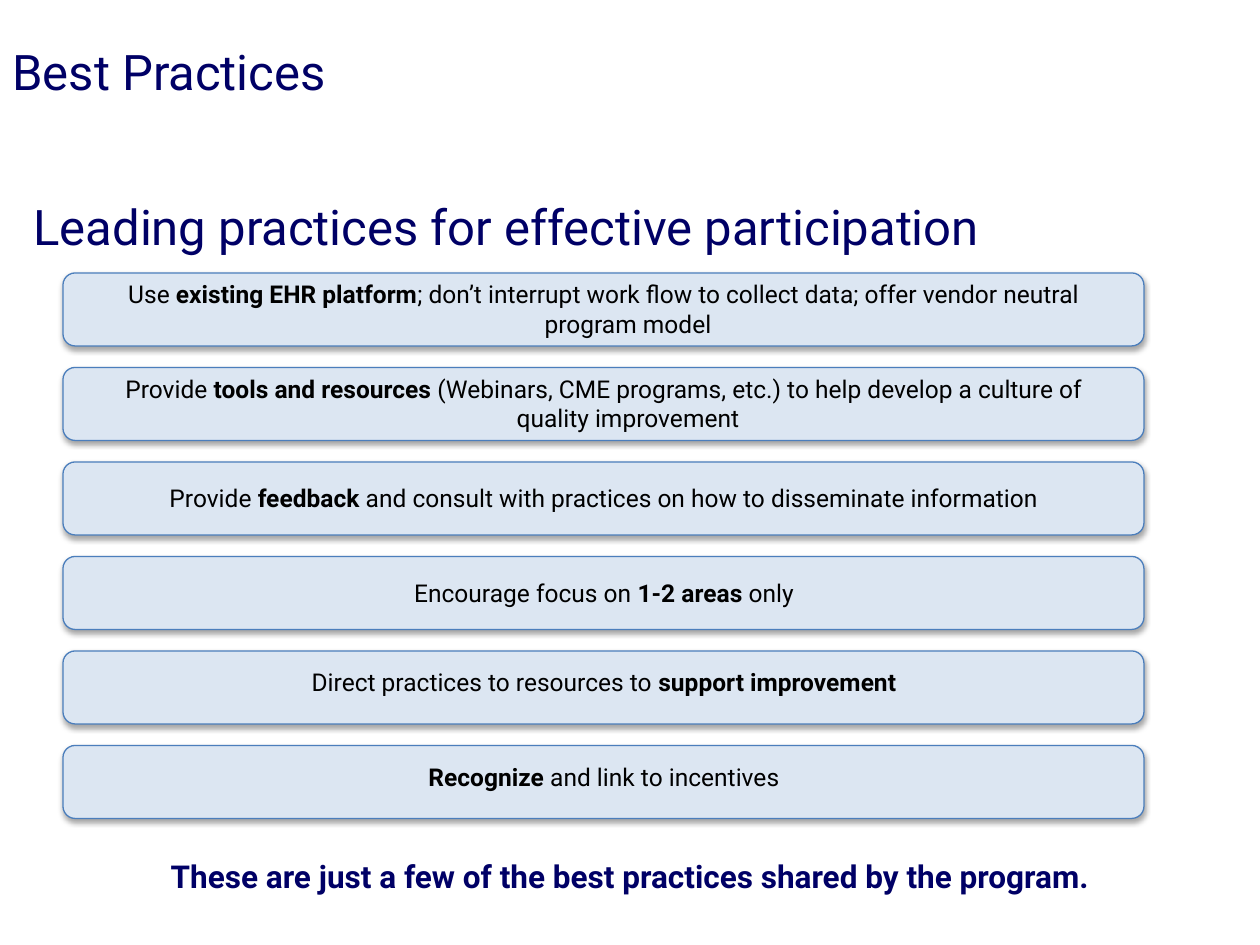
from lxml.etree import SubElement
from pptx import Presentation
from pptx.dml.color import RGBColor
from pptx.enum.shapes import MSO_SHAPE
from pptx.enum.text import MSO_ANCHOR, MSO_AUTO_SIZE, PP_ALIGN
from pptx.oxml.ns import qn
from pptx.util import Emu, Pt

SCALE = 914400 / 126  # EMU per px
HUES = {"navy": "000066", "black": "000000", "pale": "DCE6F2", "edge": "4B7EBC"}

# Text formats
HEAD = {"name": "Roboto", "size": Pt(28), "bold": False}
ITEM = {"name": "Roboto", "size": Pt(14), "bold": False}
NOTE = {"name": "Roboto", "size": Pt(18), "bold": True}
HANG = 48  # hanging indent of the practice text

# Bars: a column of equal pitch; each text is offset from its bar's top
LEFT, TOP, WIDE, HIGH = 63, 273, 1081, 73
PITCH = 94.5
# Words between asterisks are bold
ITEMS = [
    ("Use *existing EHR platform*; don’t interrupt work flow to collect data; "
     "offer vendor neutral program model", 0, 72),
    ("Provide *tools and resources* (Webinars, CME programs, etc.) to help "
     "develop a culture of quality improvement", 0, 72),
    ("Provide *feedback* and consult with practices on how to disseminate "
     "information", 15, 43),
    ("Encourage focus on *1-2 areas* only", 15, 43),
    ("Direct practices to resources to *support improvement*", 10, 43),
    ("*Recognize* and link to incentives", 10, 43),
]


def px(*sizes):
    return [Emu(round(size * SCALE)) for size in sizes]


def hue(key):
    return RGBColor.from_string(HUES[key])


def apply(thing, values):
    for key, value in values.items():
        setattr(thing, key, value)


def place(shape, *box):
    apply(shape, dict(zip(("left", "top", "width", "height"), px(*box))))


def write(shape, text, look, color, align, anchor=MSO_ANCHOR.TOP):
    """Fill a shape with one paragraph and return the paragraph."""
    frame = shape.text_frame
    apply(frame, {"word_wrap": True, "auto_size": MSO_AUTO_SIZE.NONE,
                  "vertical_anchor": anchor})
    para = frame.paragraphs[0]
    para.alignment = align
    for index, part in enumerate(text.split("*")):
        if part:
            run = para.add_run()
            run.text = part
            apply(run.font, look)
            if index % 2:
                run.font.bold = True
            run.font.color.rgb = hue(color)
    return para


def shade(shape):
    """Give a shape a soft shadow straight below."""
    shape.shadow.inherit = False
    list_ = shape.fill._xPr.find(qn("a:effectLst"))
    glow = SubElement(list_, qn("a:outerShdw"), blurRad="40000", dist="23000",
                      dir="5400000", rotWithShape="0")
    tint = SubElement(glow, qn("a:srgbClr"), val=HUES["black"])
    SubElement(tint, qn("a:alpha"), val="35000")


def bar(shapes, top):
    shape = shapes.add_shape(MSO_SHAPE.ROUNDED_RECTANGLE,
                             *px(LEFT, top, WIDE, HIGH))
    shape.fill.solid()
    shape.fill.fore_color.rgb = hue("pale")
    shape.line.color.rgb = hue("edge")
    shape.line.width = Pt(0.75)
    shade(shape)


def label(shapes, text, top, high):
    box = shapes.add_textbox(*px(84, top, 1040, high))
    para = write(box, text, ITEM, "black", PP_ALIGN.CENTER)
    indent = px(HANG)[0]
    props = para._p.get_or_add_pPr()
    props.set("marL", str(indent))
    props.set("indent", str(-indent))


def main():
    deck = Presentation()
    deck.slide_width, deck.slide_height = px(1260, 945)
    slide = deck.slides.add_slide(deck.slide_layouts[5])
    shapes = slide.shapes

    # Headings
    title = shapes.title
    place(title, 21, 189, 1218, 73)
    topic = shapes.add_textbox(*px(0, 32, 1218, 78))
    for shape, text in ((title, "Leading practices for effective participation"),
                        (topic, "Best Practices")):
        write(shape, text, HEAD, "navy", PP_ALIGN.LEFT, MSO_ANCHOR.MIDDLE)

    # Practice bars
    group = shapes.add_group_shape().shapes
    for index, (text, drop, high) in enumerate(ITEMS):
        top = TOP + index * PITCH
        bar(group, top)
        label(group, text, top + drop, high)

    # Closing line
    close = shapes.add_textbox(*px(126, 851, 1008, 50))
    write(close, "These are just a few of the best practices shared by the program.",
          NOTE, "navy", PP_ALIGN.CENTER)

    deck.save("out.pptx")


if __name__ == "__main__":
    main()
